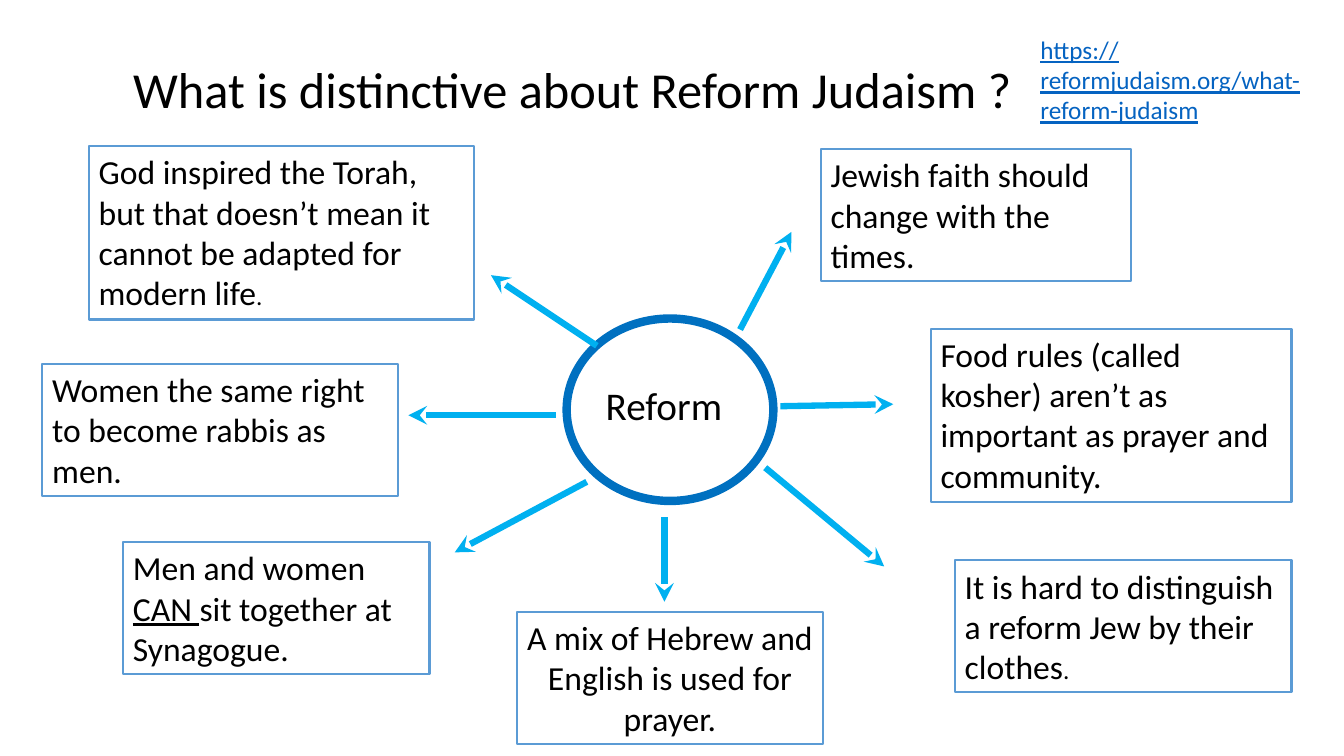
from lxml import etree
from pptx import Presentation
from pptx.dml.color import RGBColor
from pptx.enum.shapes import MSO_CONNECTOR, MSO_SHAPE
from pptx.enum.text import MSO_ANCHOR, PP_ALIGN
from pptx.oxml.ns import qn
from pptx.util import Inches, Pt

BLACK = RGBColor(0x00, 0x00, 0x00)
SKY = RGBColor(0x00, 0xB0, 0xF0)
BLUE = RGBColor(0x00, 0x70, 0xC0)
EDGE = RGBColor(0x5B, 0x9B, 0xD5)
LINK = RGBColor(0x05, 0x63, 0xC1)
FONT = "Calibri"
LEFT, CENTER = PP_ALIGN.LEFT, PP_ALIGN.CENTER
TOP, MIDDLE = MSO_ANCHOR.TOP, MSO_ANCHOR.MIDDLE
RECT, OVAL = MSO_SHAPE.RECTANGLE, MSO_SHAPE.OVAL
STRAIGHT = MSO_CONNECTOR.STRAIGHT

CLAIMS = [
    ((8.14, 1.48, 3.08, 1.31), LEFT,
     [("Jewish faith should change with the times.", 24, False)]),
    ((9.23, 3.26, 3.58, 1.72), LEFT,
     [("Food rules (called kosher) aren’t as important as prayer and community.",
       24, False)]),
    ((9.47, 5.56, 3.34, 1.31), LEFT,
     [("It is hard to distinguish a reform Jew by their clothes", 24, False),
      (".", 18, False)]),
    ((1.22, 5.38, 3.04, 1.31), LEFT,
     [("Men and women ", 24, False), ("CAN ", 24, True),
      ("sit together at Synagogue.", 24, False)]),
    ((0.42, 3.61, 3.53, 1.31), LEFT,
     [("Women the same right to become rabbis as men.", 24, False)]),
    ((0.88, 1.45, 3.82, 1.72), LEFT,
     [("God inspired the Torah, but that doesn’t mean it cannot be adapted "
       "for modern life", 24, False), (".", 18, False)]),
    ((5.13, 6.07, 3.03, 1.31), CENTER,
     [("A mix of Hebrew and English is used for prayer.", 24, False)]),
]

ARROWS = [
    (7.34, 3.27, 7.85, 2.3),
    (7.74, 4.03, 8.86, 4.01),
    (5.51, 4.12, 4.05, 4.12),
    (5.82, 4.78, 4.51, 5.48),
    (5.92, 3.43, 4.87, 2.73),
    (7.59, 4.64, 8.77, 5.62),
    (6.59, 5.13, 6.59, 5.97),
]


def inches(box):
    """Turn a tuple of inches into lengths."""
    return [Inches(n) for n in box]


def write(frame, parts, color=BLACK, align=LEFT, anchor=TOP):
    """Fill a text frame with one paragraph of styled runs."""
    frame.word_wrap = True
    frame.vertical_anchor = anchor
    para = frame.paragraphs[0]
    para.alignment = align
    for text, size, under in parts:
        run = para.add_run()
        run.text = text
        run.font.name = FONT
        run.font.size = Pt(size)
        run.font.color.rgb = color
        if under:
            run.font.underline = True
    return para


def add_title(slide, box, text):
    """Place the heading in the title placeholder."""
    title = slide.shapes.title
    title.left, title.top, title.width, title.height = inches(box)
    para = write(title.text_frame, [(text, 36, False)], anchor=MIDDLE)
    para.line_spacing = 0.9


def add_label(slide, box, parts, color=BLACK, align=LEFT):
    """Place plain text in the box."""
    label = slide.shapes.add_textbox(*inches(box))
    write(label.text_frame, parts, color, align)


def add_frame(slide, kind, box, color, width):
    """Draw an unfilled outline."""
    shape = slide.shapes.add_shape(kind, *inches(box))
    shape.shadow.inherit = False
    shape.fill.background()
    shape.line.color.rgb = color
    shape.line.width = Pt(width)
    return shape


def add_claim(slide, box, align, parts):
    """Draw one framed statement."""
    shape = add_frame(slide, RECT, box, EDGE, 1.5)
    write(shape.text_frame, parts, align=align)


def add_hub(slide, box, text):
    """Draw the central ring with its label."""
    x, y, w, h = box
    add_frame(slide, OVAL, box, BLUE, 6)
    add_label(slide, (x + 0.04, y + 0.57, w - 0.2, 0.57),
              [(text, 28, False)], align=CENTER)


def add_arrow(slide, ends):
    """Draw an arrow from the hub outwards."""
    arrow = slide.shapes.add_connector(STRAIGHT, *inches(ends))
    arrow.line.color.rgb = SKY
    arrow.line.width = Pt(4.5)
    props = arrow.element.spPr
    etree.SubElement(props.find(qn("a:ln")), qn("a:tailEnd"), type="stealth")
    etree.SubElement(props, qn("a:effectLst"))


def main():
    """Build and save the slide."""
    deck = Presentation()
    deck.slide_width, deck.slide_height = Inches(13.33), Inches(7.5)
    slide = deck.slides.add_slide(deck.slide_layouts[5])
    add_title(slide, (1.22, 0.29, 9, 1.25),
              "What is distinctive about Reform Judaism ?")
    add_hub(slide, (5.62, 3.16, 2.05, 1.81), "Reform")
    for ends in ARROWS:
        add_arrow(slide, ends)
    for box, align, parts in CLAIMS:
        add_claim(slide, box, align, parts)
    add_label(slide, (10.22, 0.29, 2.78, 1.01),
              [("https://reformjudaism.org/what-reform-judaism", 18, True)],
              LINK)
    deck.save("out.pptx")


if __name__ == "__main__":
    main()
